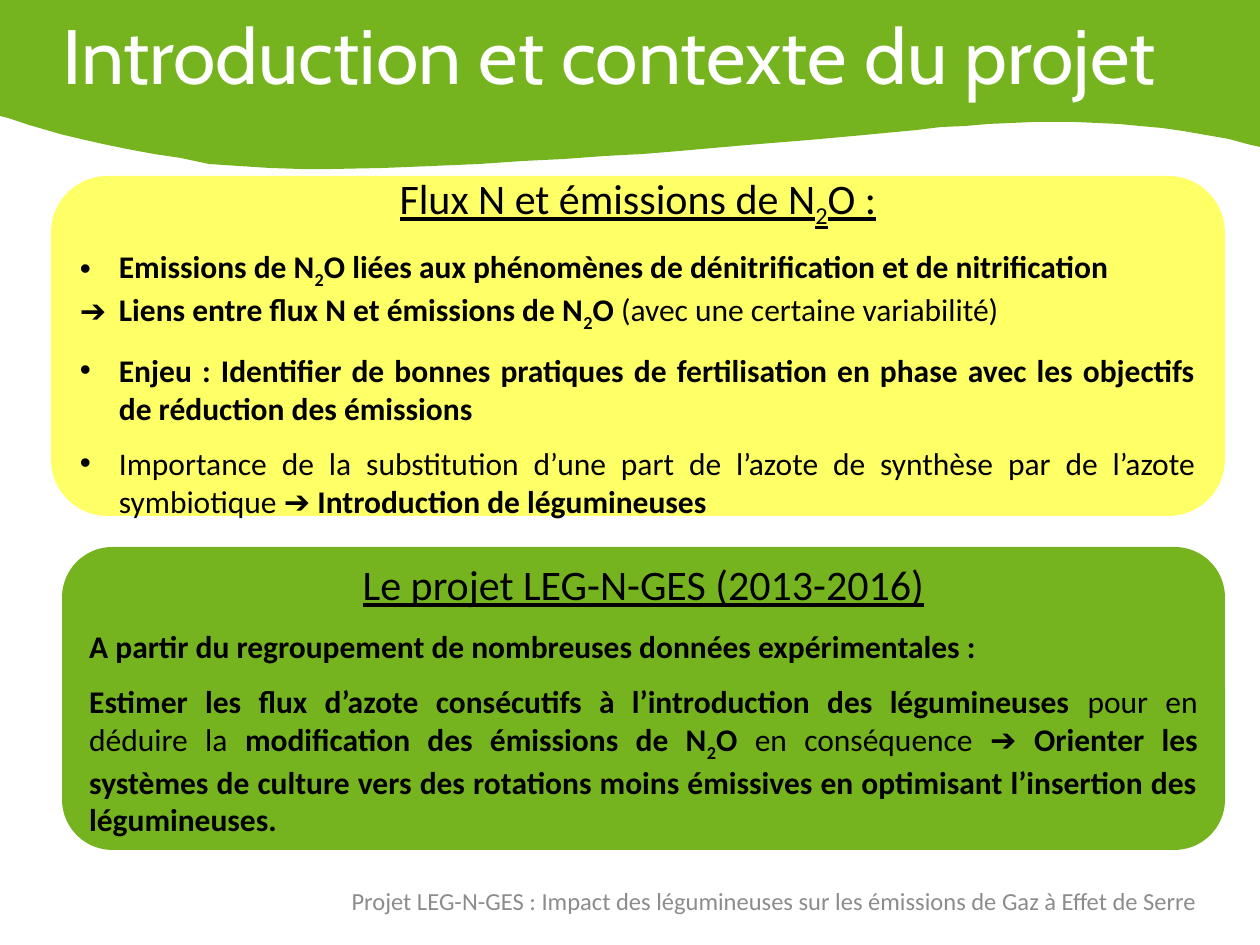
from dataclasses import dataclass
from typing import NamedTuple

from lxml.etree import SubElement
from pptx import Presentation
from pptx.dml.color import RGBColor
from pptx.enum.shapes import MSO_SHAPE
from pptx.enum.text import MSO_ANCHOR, PP_ALIGN
from pptx.oxml.ns import qn
from pptx.util import Emu, Pt

PX_PER_INCH = 126
EMU_PER_PX = 914400 / PX_PER_INCH

GREEN = RGBColor(0x76, 0xB4, 0x1F)
YELLOW = RGBColor(0xFF, 0xFF, 0x66)
GREY = RGBColor(0x8C, 0x8C, 0x8C)
BLACK = RGBColor(0, 0, 0)
WHITE = RGBColor(0xFF, 0xFF, 0xFF)

BODY_FONT = "Calibri"
HANGING_INDENT = 39
GAP = 10  # points between groups of lines

# Lower edge of the banner from right to left, then its top corners
WAVE = [
    (1275, 150), (1251, 145), (1229, 139), (1206, 135), (1183, 131),
    (1162, 128), (1140, 126), (1119, 124), (1097, 123), (1076, 122),
    (1055, 122), (1033, 122), (1011, 123), (988, 124), (965, 126),
    (941, 127), (917, 130), (864, 135), (809, 140), (747, 145),
    (679, 151), (643, 154), (605, 156), (564, 159), (523, 161),
    (479, 164), (432, 166), (383, 168), (331, 169), (301, 169),
    (270, 168), (239, 166), (209, 164), (181, 158), (154, 154),
    (127, 149), (103, 144), (81, 139), (60, 134), (43, 129),
    (29, 125), (8, 118), (0, 116), (0, 0), (1278, 0),
]


class Box(NamedTuple):
    x: int
    y: int
    w: int
    h: int


@dataclass(frozen=True)
class Run:
    text: str
    bold: bool = False
    underline: bool = False
    subscript: bool = False


@dataclass(frozen=True)
class Para:
    runs: list[Run]
    size: int = 18
    align: PP_ALIGN = PP_ALIGN.JUSTIFY
    bullet: str = ""
    before: int = 0


@dataclass(frozen=True)
class Panel:
    box: Box
    fill: RGBColor
    paras: list[Para]


def bold(text: str) -> Run:
    return Run(text, bold=True)


def n2o(before: str, after: str, **style: bool) -> list[Run]:
    """Runs around the formula N2O, with its digit lowered."""
    return [Run(before + "N", **style), Run("2", subscript=True, **style),
            Run("O" + after, **style)]


def heading(runs: list[Run]) -> Para:
    return Para(runs, size=24, align=PP_ALIGN.CENTER)


PANELS = [
    Panel(Box(51, 176, 1174, 340), YELLOW, [
        heading(n2o("Flux N et émissions de ", " :", underline=True)),
        Para(n2o("Emissions de ", " liées aux phénomènes de dénitrification "
                 "et de nitrification", bold=True), bullet="•", before=GAP),
        Para(n2o("Liens entre flux N et émissions de ", " ", bold=True)
             + [Run("(avec une certaine variabilité)")], bullet="➔"),
        Para([bold("Enjeu : Identifier de bonnes pratiques de fertilisation en "
                   "phase avec les objectifs de réduction des émissions")],
             bullet="•", before=GAP),
        Para([Run("Importance de la substitution d’une part de l’azote de "
                  "synthèse par de l’azote symbiotique ➔ "),
              bold("Introduction de légumineuses")], bullet="•", before=GAP),
    ]),
    Panel(Box(62, 547, 1163, 303), GREEN, [
        heading([Run("Le projet LEG-N-GES (2013-2016)", underline=True)]),
        Para([bold("A partir du regroupement de nombreuses données "
                   "expérimentales :")], before=GAP),
        Para([bold("Estimer les flux d’azote consécutifs à l’introduction "
                   "des légumineuses"),
              Run(" pour en déduire la "),
              *n2o("modification des émissions de ", " ", bold=True),
              Run("en conséquence ➔ "),
              bold("Orienter les systèmes de culture vers des rotations moins "
                   "émissives en optimisant l’insertion des légumineuses.")],
             before=GAP),
    ]),
]


def px(n: int) -> Emu:
    return Emu(round(n * EMU_PER_PX))


def place(box: Box) -> list[Emu]:
    return [px(n) for n in box]


def set_bullet(p, char: str) -> None:
    pPr = p._p.get_or_add_pPr()
    pPr.set("marL", str(px(HANGING_INDENT)))
    pPr.set("indent", str(-px(HANGING_INDENT)))
    SubElement(pPr, qn("a:buFont")).set("typeface", "Arial")
    SubElement(pPr, qn("a:buChar")).set("char", char)


def write(tf, paras: list[Para], color: RGBColor, font: str = BODY_FONT) -> None:
    tf.word_wrap = True
    tf.vertical_anchor = MSO_ANCHOR.MIDDLE
    for i, para in enumerate(paras):
        p = tf.add_paragraph() if i else tf.paragraphs[0]
        if para.bullet:
            set_bullet(p, para.bullet)
        p.alignment = para.align
        p.space_before = Pt(para.before)
        for run in para.runs:
            r = p.add_run()
            r.text = run.text
            r.font.name = font
            r.font.size = Pt(para.size)
            r.font.color.rgb = color
            r.font.bold = run.bold
            r.font.underline = run.underline
            if run.subscript:
                r._r.get_or_add_rPr().set("baseline", "-25000")


def paint(sp, color: RGBColor) -> None:
    sp.shadow.inherit = False
    sp.fill.solid()
    sp.fill.fore_color.rgb = color
    sp.line.fill.background()


def add_banner(s) -> None:
    builder = s.shapes.build_freeform(*WAVE[0], scale=EMU_PER_PX)
    builder.add_line_segments(WAVE[1:], close=True)
    paint(builder.convert_to_shape(), GREEN)


def add_title(s, text: str) -> None:
    tf = s.shapes.add_textbox(*place(Box(50, 6, 1134, 127))).text_frame
    write(tf, [Para([Run(text)], size=44, align=PP_ALIGN.LEFT)], WHITE, "Cabin")
    tf.paragraphs[0].line_spacing = Pt(35)


def add_footer(s, text: str) -> None:
    tf = s.shapes.add_textbox(*place(Box(331, 876, 866, 50))).text_frame
    tf.margin_left = tf.margin_right = 0
    write(tf, [Para([Run(text)], size=14, align=PP_ALIGN.RIGHT)], GREY)


def add_panel(s, panel: Panel) -> None:
    sp = s.shapes.add_shape(MSO_SHAPE.ROUNDED_RECTANGLE, *place(panel.box))
    paint(sp, panel.fill)
    write(sp.text_frame, panel.paras, BLACK)


def main() -> None:
    prs = Presentation()
    prs.slide_width, prs.slide_height = px(1260), px(945)
    s = prs.slides.add_slide(prs.slide_layouts[6])
    add_banner(s)
    add_title(s, "Introduction et contexte du projet")
    add_footer(s, "Projet LEG-N-GES : Impact des légumineuses sur les émissions "
                  "de Gaz à Effet de Serre")
    for panel in PANELS:
        add_panel(s, panel)
    prs.save("out.pptx")


if __name__ == "__main__":
    main()
